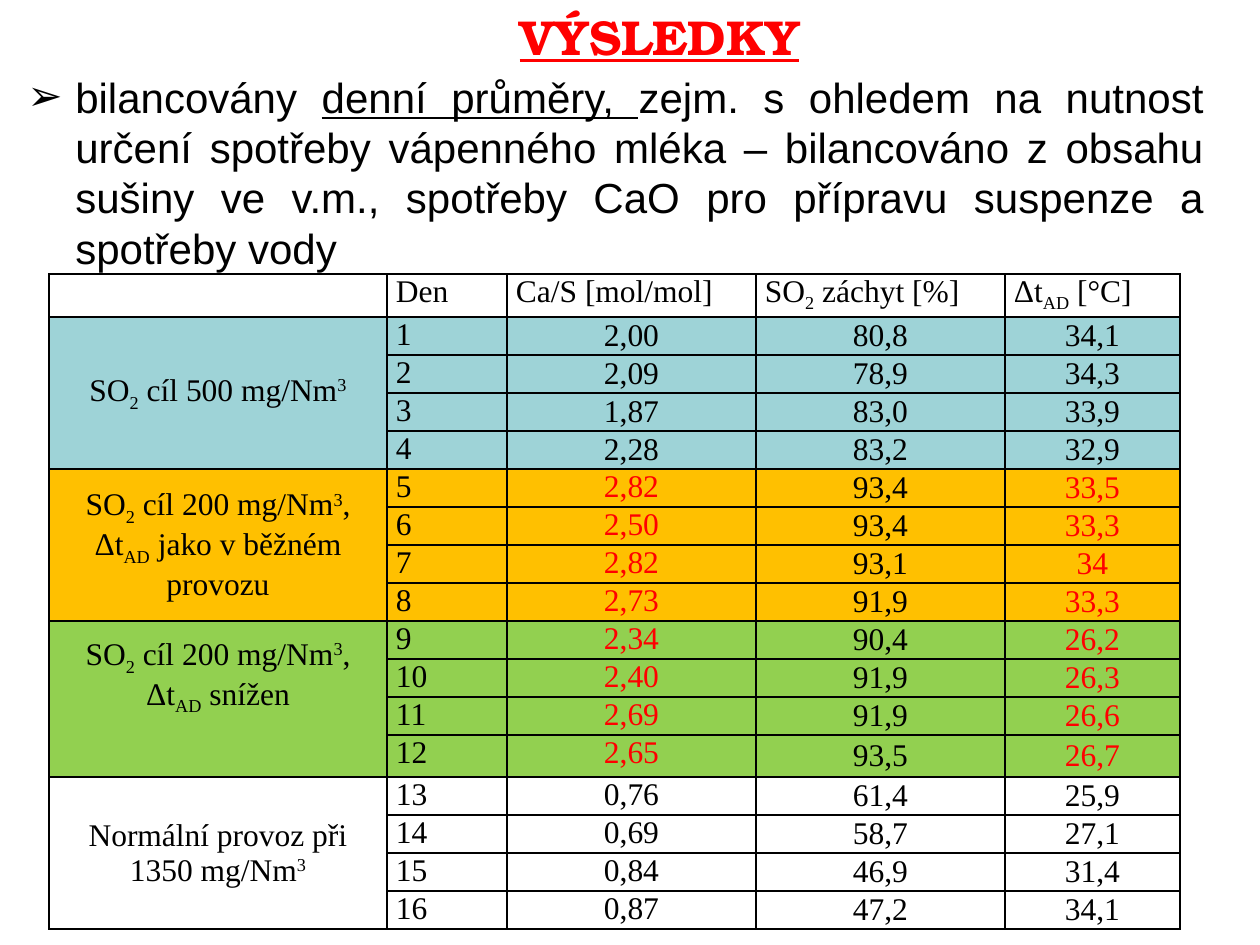
from lxml import etree
from pptx import Presentation
from pptx.dml.color import RGBColor
from pptx.enum import text
from pptx.oxml import ns
from pptx.util import Emu, Pt

PX = 914400 // 126
THEME = {
    "ink": "000000", "red": "FF0000",
    "blue": "9ED3D7", "amber": "FFC000", "green": "92D050",
    "title": {"name": "TeX Gyre Bonum", "size": Pt(28), "bold": True, "underline": True},
    "body": {"name": "Arial", "size": Pt(24)},
    "cell": {"name": "Times New Roman", "size": Pt(18)},
}
BASELINES = {"_": "-25000", "^": "30000"}


def add_runs(p, markup, style, color):
    for part in markup.split("|"):
        r = p.add_run()
        r.text = part.lstrip("_^")
        for key, value in THEME[style].items():
            setattr(r.font, key, value)
        r.font.color.rgb = RGBColor.from_string(THEME[color])
        if part[0] in BASELINES:
            r.font._element.set("baseline", BASELINES[part[0]])


def fill_cell(cell, markup, align, anchor, color="ink", bottom=0):
    margins = {"margin_left": 9, "margin_right": 9, "margin_top": 0, "margin_bottom": bottom}
    for key, value in margins.items():
        setattr(cell, key, Emu(value * PX))
    cell.vertical_anchor = anchor
    if markup:
        p = cell.text_frame.paragraphs[0]
        p.alignment = align
        add_runs(p, markup, "cell", color)


prs = Presentation()
prs.slide_width, prs.slide_height = Emu(1260 * PX), Emu(945 * PX)
s = prs.slides.add_slide(prs.slide_layouts[5])
ALIGN, ANCHOR = text.PP_ALIGN, text.MSO_ANCHOR

title = s.shapes.title
box = {"left": -2, "top": 0, "width": 1260, "height": 72}
for key, value in box.items():
    setattr(title, key, Emu(value * PX))
tf = title.text_frame
tf.vertical_anchor = ANCHOR.TOP
p = tf.paragraphs[0]
p.alignment = ALIGN.CENTER
p._p.get_or_add_pPr().set("marL", str(63 * PX))
add_runs(p, "VÝSLEDKY", "title", "red")

sp = s.shapes.add_textbox(*(Emu(v * PX) for v in (15, 65, 1201, 217)))
tf = sp.text_frame
tf.word_wrap = True
p = tf.paragraphs[0]
p.alignment = ALIGN.JUSTIFY
pPr = p._p.get_or_add_pPr()
pPr.set("marL", str(48 * PX))
pPr.set("indent", str(-48 * PX))
etree.SubElement(pPr, ns.qn("a:buFont"), typeface="Arial")
etree.SubElement(pPr, ns.qn("a:buChar"), char="➢")
add_runs(
    p,
    "bilancovány |denní průměry, |zejm. s ohledem na nutnost určení spotřeby vápenného mléka – "
    "bilancováno z obsahu sušiny ve v.m., spotřeby CaO pro přípravu suspenze a spotřeby vody",
    "body", "ink")
p.runs[1].font.underline = True

HEADERS = ["", "Den", "Ca/S [mol/mol]", "SO|_2| záchyt [%]", "Δt|_AD| [°C]"]
GROUPS = [
    ("SO|_2| cíl 500 mg/Nm|^3", "blue", "ink", ANCHOR.MIDDLE, 0,
     [("2,00", "80,8", "34,1"), ("2,09", "78,9", "34,3"),
      ("1,87", "83,0", "33,9"), ("2,28", "83,2", "32,9")]),
    ("SO|_2| cíl 200 mg/Nm|^3|, Δt|_AD| jako v běžném provozu", "amber", "red", ANCHOR.TOP, 0,
     [("2,82", "93,4", "33,5"), ("2,50", "93,4", "33,3"),
      ("2,82", "93,1", "34"), ("2,73", "91,9", "33,3")]),
    ("SO|_2| cíl 200 mg/Nm|^3|, Δt|_AD| snížen", "green", "red", ANCHOR.TOP, 44,
     [("2,34", "90,4", "26,2"), ("2,40", "91,9", "26,3"),
      ("2,69", "91,9", "26,6"), ("2,65", "93,5", "26,7")]),
    ("Normální provoz při 1350 mg/Nm|^3", None, "ink", ANCHOR.TOP, 0,
     [("0,76", "61,4", "25,9"), ("0,69", "58,7", "27,1"),
      ("0,84", "46,9", "31,4"), ("0,87", "47,2", "34,1")]),
]
WIDTHS = [338, 120, 249, 249, 175]
HEIGHTS = [43] + [38] * 11 + [42] + [38] * 4

frame = s.shapes.add_table(
    len(HEIGHTS), len(WIDTHS),
    *(Emu(v * PX) for v in (49, 274, sum(WIDTHS), sum(HEIGHTS))))
table = frame.table
table.first_row = table.horz_banding = False
for column, width in zip(table.columns, WIDTHS):
    column.width = Emu(width * PX)
for row, height in zip(table.rows, HEIGHTS):
    row.height = Emu(height * PX)

for col, header in enumerate(HEADERS):
    fill_cell(table.cell(0, col), header, ALIGN.JUSTIFY, ANCHOR.TOP)

for g, (label, fill, accent, ratio_anchor, bottom, days) in enumerate(GROUPS):
    first = 1 + 4 * g
    table.cell(first, 0).merge(table.cell(first + 3, 0))
    fill_cell(table.cell(first, 0), label, ALIGN.CENTER, ANCHOR.MIDDLE, bottom=bottom)
    for day, (ratio, capture, delta) in enumerate(days, first):
        fill_cell(table.cell(day, 1), str(day), ALIGN.JUSTIFY, ANCHOR.TOP)
        fill_cell(table.cell(day, 2), ratio, ALIGN.CENTER, ratio_anchor, accent)
        fill_cell(table.cell(day, 3), capture, ALIGN.CENTER, ANCHOR.MIDDLE)
        fill_cell(table.cell(day, 4), delta, ALIGN.CENTER, ANCHOR.MIDDLE, accent)

FILLS = [None] + [group[1] for group in GROUPS for day in group[5]]
for row, fill in zip(table.rows, FILLS):
    for cell in row.cells:
        tcPr = cell._tc.get_or_add_tcPr()
        for side in ("lnL", "lnR", "lnT", "lnB"):
            ln = etree.SubElement(tcPr, ns.qn(f"a:{side}"), w=str(Pt(1)))
            solid = etree.SubElement(ln, ns.qn("a:solidFill"))
            etree.SubElement(solid, ns.qn("a:srgbClr"), val=THEME["ink"])
        if fill:
            cell.fill.solid()
            cell.fill.fore_color.rgb = RGBColor.from_string(THEME[fill])
        else:
            cell.fill.background()

prs.save("out.pptx")
